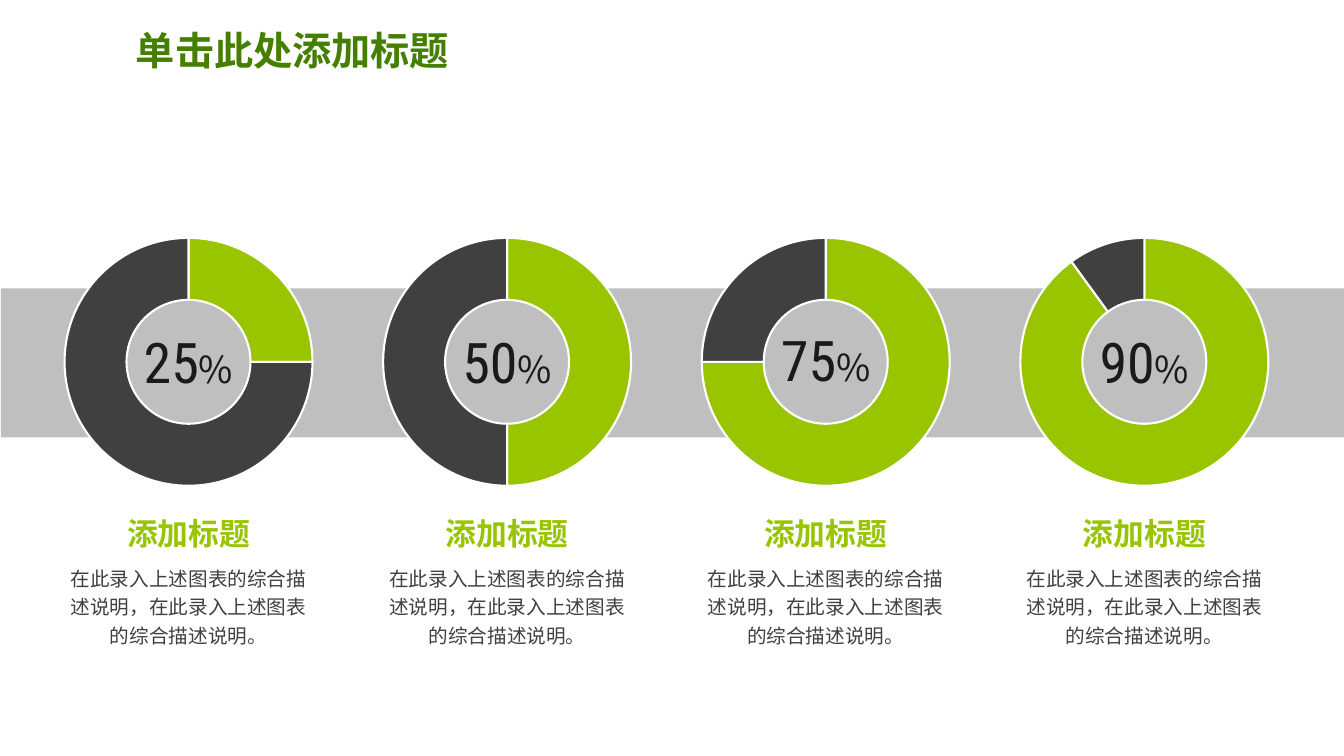
import pptx
import pptx.chart.data
import pptx.dml.color
import pptx.enum.chart
import pptx.enum.shapes
import pptx.enum.text
import pptx.oxml
import pptx.oxml.ns
import pptx.util
from lxml import etree
from pptx.util import Inches

COLORS = {
    "white": "FFFFFF",
    "band": "BFBFBF",
    "green": "99C400",
    "dark green": "447F00",
    "gray": "404040",
    "ink": "1A1A1A",
    "black": "000000",
}
CJK_FONT = "Noto Sans CJK SC"
CENTER = pptx.enum.text.PP_ALIGN.CENTER
MIDDLE = pptx.enum.text.MSO_ANCHOR.MIDDLE


def color(name):
    return pptx.dml.color.RGBColor.from_string(COLORS[name])


def add_text(left, top, width, height, text, size, font_name, color_name, bold=False):
    """Add a wrapping one-paragraph text box and return its frame and paragraph."""
    box = page.shapes.add_textbox(Inches(left), Inches(top), Inches(width), Inches(height))
    frame = box.text_frame
    frame.word_wrap = True
    para = frame.paragraphs[0]
    para.text = text
    font = para.font
    font.name = font_name
    font.size = pptx.util.Pt(size)
    font.bold = bold
    font.color.rgb = color(color_name)
    east_asian = etree.SubElement(font._element, pptx.oxml.ns.qn("a:ea"))
    east_asian.set("typeface", CJK_FONT)
    return frame, para


deck = pptx.Presentation()
deck.slide_width = Inches(13.33)
deck.slide_height = Inches(7.5)
page = deck.slides.add_slide(deck.slide_layouts[6])
page.background.fill.solid()
page.background.fill.fore_color.rgb = color("white")

band = page.shapes.add_shape(
    pptx.enum.shapes.MSO_SHAPE.RECTANGLE,
    Inches(0.01), Inches(2.86), Inches(13.32), Inches(1.48),
)
band.shadow.inherit = False
band.fill.solid()
band.fill.fore_color.rgb = color("band")
band.line.fill.background()

# Each column: percentage and top of its number box
columns = [(25, 3.2), (50, 3.2), (75, 3.18), (90, 3.2)]
first_center, column_step = 1.87, 3.16
chart_width, chart_height, ring_size = 2.73, 2.9, 2.46

for index, (percent, number_top) in enumerate(columns):
    center = first_center + index * column_step

    data = pptx.chart.data.CategoryChartData()
    data.categories = ["1", "2"]
    data.add_series("Series 1", [percent, 100 - percent])
    chart = page.shapes.add_chart(
        pptx.enum.chart.XL_CHART_TYPE.DOUGHNUT,
        Inches(center - chart_width / 2), Inches(2.14),
        Inches(chart_width), Inches(chart_height), data,
    ).chart
    chart.has_legend = False
    chart.has_title = False
    chart.font.name = "Arial"
    chart.font.size = pptx.util.Pt(10)
    chart.font.color.rgb = color("black")
    plot = chart.plots[0]
    plot.vary_by_categories = True
    for point_index, point_color in enumerate(["green", "gray"]):
        style = plot.series[0].points[point_index].format
        style.fill.solid()
        style.fill.fore_color.rgb = color(point_color)
        style.line.color.rgb = color("white")
        style.line.width = pptx.util.Pt(1.5)

    chart_xml = chart._chartSpace
    for hole in chart_xml.iter(pptx.oxml.ns.qn("c:holeSize")):
        hole.set("val", "75")
    plot_area = chart_xml.find(".//" + pptx.oxml.ns.qn("c:plotArea"))
    for old_layout in plot_area.findall(pptx.oxml.ns.qn("c:layout")):
        plot_area.remove(old_layout)
    ring_width, ring_height = ring_size / chart_width, ring_size / chart_height
    plot_area.insert(0, pptx.oxml.parse_xml(
        f'<c:layout {pptx.oxml.ns.nsdecls("c")}><c:manualLayout>'
        '<c:layoutTarget val="inner"/><c:xMode val="edge"/><c:yMode val="edge"/>'
        f'<c:x val="{(1 - ring_width) / 2:.4f}"/><c:y val="{(1 - ring_height) / 2:.4f}"/>'
        f'<c:w val="{ring_width:.4f}"/><c:h val="{ring_height:.4f}"/>'
        '</c:manualLayout></c:layout>'
    ))

    frame, para = add_text(center - 0.87, number_top, 1.74, 0.77,
                           str(percent), 40, "Roboto Condensed", "ink")
    frame.vertical_anchor = MIDDLE
    para.alignment = CENTER
    sign = para.add_run()
    sign.text = "%"
    sign.font.size = pptx.util.Pt(26.6)
    sign.font.name = CJK_FONT

    frame, para = add_text(center - 0.72, 5.06, 1.44, 0.47,
                           "添加标题", 22, "Arial", "green", bold=True)
    frame.word_wrap = False
    para.alignment = CENTER

    frame, para = add_text(center - 1.27, 5.53, 2.54, 0.95,
                           "在此录入上述图表的综合描述说明，在此录入上述图表的综合描述说明。",
                           14, CJK_FONT, "gray")
    para.alignment = CENTER
    para.line_spacing = 1.2

frame, para = add_text(1.25, 0.1, 11.5, 0.85, "单击此处添加标题",
                       28, "Montserrat", "dark green", bold=True)
frame.vertical_anchor = MIDDLE
para.line_spacing = 0.9

deck.save("out.pptx")
